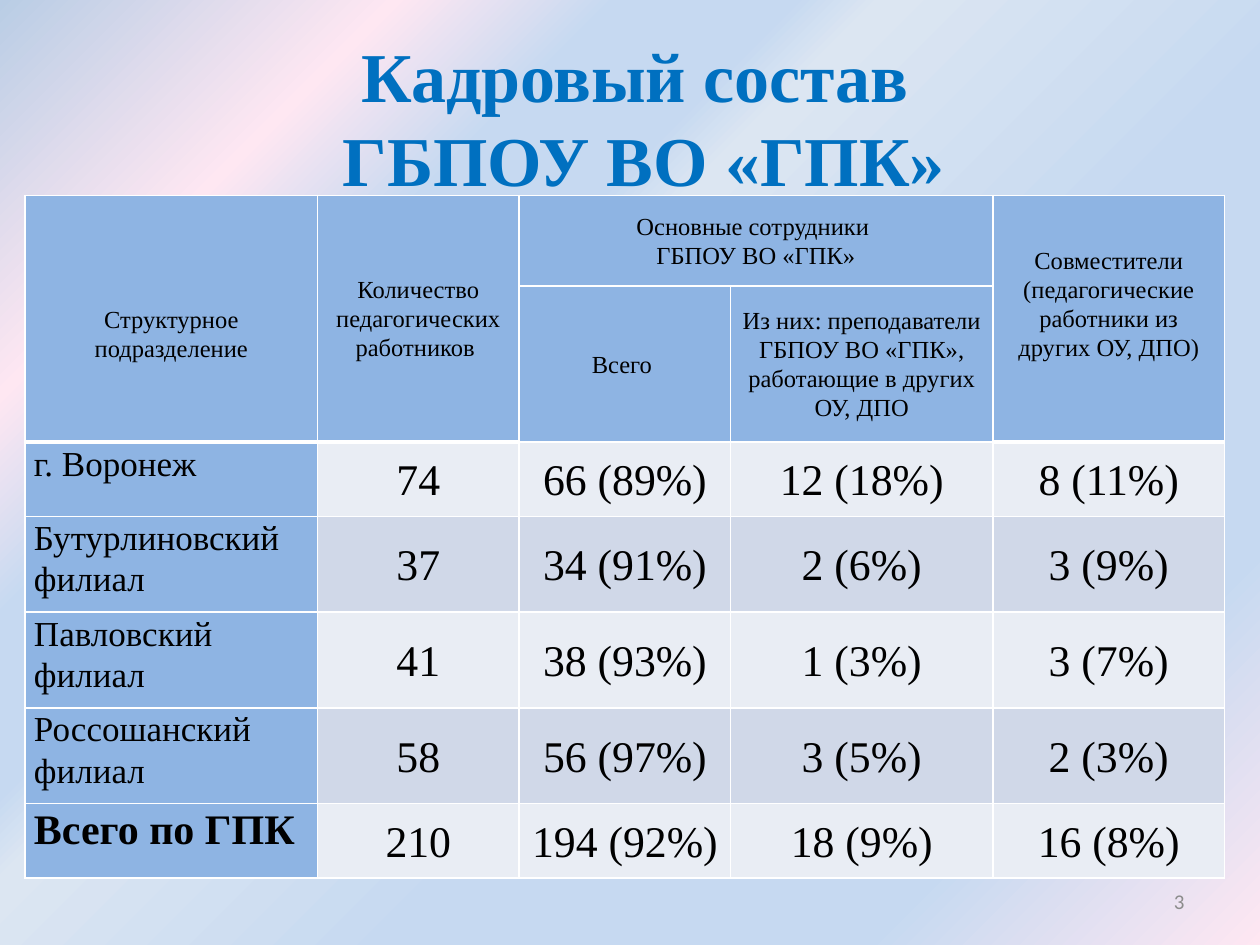
from lxml import etree
from pptx import Presentation
from pptx import util as u
from pptx.dml.color import RGBColor
from pptx.enum import text
from pptx.oxml import ns

BLUE = RGBColor(0x00, 0x70, 0xC0)
HEADER = RGBColor(0x8E, 0xB4, 0xE3)
LIGHT = RGBColor(0xE9, 0xED, 0xF4)
DARK = RGBColor(0xD0, 0xD8, 0xE8)
GREY = RGBColor(0x8C, 0x8C, 0x8C)
WHITE = RGBColor(0xFF, 0xFF, 0xFF)
BLACK = RGBColor(0x00, 0x00, 0x00)
PINK = RGBColor(0xFE, 0xE7, 0xF2)
SKY = RGBColor(0xC6, 0xD9, 0xF1)
STEEL = RGBColor(0xB9, 0xCD, 0xE5)
PALE = RGBColor(0xDC, 0xE6, 0xF2)

STOPS = [(0, STEEL), (18, PINK), (28, SKY), (36, SKY),
         (40, PALE), (61, SKY), (82, SKY), (100, PINK)]

COLUMNS = [2.32, 1.6, 1.68, 2.08, 1.84]
ROWS = [0.72, 1.17, 0.59, 0.76, 0.76, 0.76, 0.59]
HEADER_ROWS = 2
SPANS = [(0, 0, 1, 0), (0, 1, 1, 1), (0, 2, 0, 3), (0, 4, 1, 4)]
HEADERS = {
    (0, 0): "Структурное подразделение",
    (0, 1): "Количество педагогических работников ",
    (0, 2): "Основные сотрудники \nГБПОУ ВО «ГПК»",
    (0, 4): "Совместители (педагогические работники из других ОУ, ДПО)",
    (1, 2): "Всего ",
    (1, 3): "Из них: преподаватели ГБПОУ ВО «ГПК», работающие в других ОУ, ДПО",
}
STAFF = [
    ("г. Воронеж", "74", "66 (89%)", "12 (18%)", "8 (11%)"),
    ("Бутурлиновский филиал", "37", "34 (91%)", "2 (6%)", "3 (9%)"),
    ("Павловский филиал", "41", "38 (93%)", "1 (3%)", "3 (7%)"),
    ("Россошанский филиал", "58", "56 (97%)", "3 (5%)", "2 (3%)"),
    ("Всего по ГПК", "210", "194 (92%)", "18 (9%)", "16 (8%)"),
]


class SlideBuilder:
    font = "Times New Roman"

    def __init__(self, prs):
        self.s = prs.slides.add_slide(prs.slide_layouts[5])

    def background(self, stops, angle):
        self.s.background.fill.gradient()
        grad = self.s.element.find(".//" + ns.qn("a:gradFill"))
        stop_list = grad.find(ns.qn("a:gsLst"))
        for old in list(stop_list):
            stop_list.remove(old)
        for position, color in stops:
            stop = etree.SubElement(stop_list, ns.qn("a:gs"), pos=str(position * 1000))
            etree.SubElement(stop, ns.qn("a:srgbClr"), val=str(color))
        grad.find(ns.qn("a:lin")).set("ang", str(angle * 60000))

    def set_text(self, tf, content, size, color, align, bold=False, font=None, spacing=None):
        tf.text = content
        for p in tf.paragraphs:
            p.alignment = align
            p.line_spacing = spacing
            p.font.size = u.Pt(size)
            p.font.name = font or self.font
            p.font.bold = bold
            p.font.color.rgb = color

    def title(self, content, box):
        sp = self.s.shapes.title
        sp.left, sp.top, sp.width, sp.height = map(u.Inches, box)
        tf = sp.text_frame
        tf.word_wrap = False
        tf.auto_size = text.MSO_AUTO_SIZE.NONE
        tf.vertical_anchor = text.MSO_ANCHOR.TOP
        self.set_text(tf, content, 40, BLUE, text.PP_ALIGN.CENTER, bold=True, spacing=1.0)

    def page_number(self, content, box):
        tf = self.s.shapes.add_textbox(*map(u.Inches, box)).text_frame
        tf.word_wrap = True
        tf.vertical_anchor = text.MSO_ANCHOR.MIDDLE
        self.set_text(tf, content, 12, GREY, text.PP_ALIGN.RIGHT, font="Calibri")

    def table(self, x, y, columns, rows):
        frame = self.s.shapes.add_table(
            len(rows), len(columns), u.Inches(x), u.Inches(y),
            u.Inches(sum(columns)), u.Inches(sum(rows)))
        table = frame.table
        table.first_row = False
        table.horz_banding = False
        for column, width in zip(table.columns, columns):
            column.width = u.Inches(width)
        for row, height in zip(table.rows, rows):
            row.height = u.Inches(height)
        return table

    def cell(self, cell, content, fill, size, align=text.PP_ALIGN.CENTER,
             anchor=text.MSO_ANCHOR.MIDDLE, bold=False):
        cell.margin_left = cell.margin_right = u.Inches(0.07)
        cell.margin_top = cell.margin_bottom = 0
        cell.vertical_anchor = anchor
        self.set_text(cell.text_frame, content, size, BLACK, align, bold, spacing=1.07)
        cell.fill.solid()
        cell.fill.fore_color.rgb = fill

    def borders(self, cell, **widths):
        tcPr = cell._tc.get_or_add_tcPr()
        for i, side in enumerate("LRTB"):
            line = etree.Element(ns.qn("a:ln" + side), w=str(u.Pt(widths.get(side, 1))))
            solid = etree.SubElement(line, ns.qn("a:solidFill"))
            etree.SubElement(solid, ns.qn("a:srgbClr"), val=str(WHITE))
            tcPr.insert(i, line)


def fill_table(b):
    table = b.table(0.2, 1.55, COLUMNS, ROWS)
    for top, left, bottom, right in SPANS:
        table.cell(top, left).merge(table.cell(bottom, right))
    for (row, col), content in HEADERS.items():
        b.cell(table.cell(row, col), content, HEADER, 14)
    table.cell(0, 0).margin_top = u.Inches(0.24)
    table.cell(0, 4).margin_bottom = u.Inches(0.24)

    for row, (unit, *values) in enumerate(STAFF, HEADER_ROWS):
        total = row == len(ROWS) - 1
        b.cell(table.cell(row, 0), unit, HEADER, 24 if total else 20,
               text.PP_ALIGN.LEFT, text.MSO_ANCHOR.TOP, total)
        for col, value in enumerate(values, 1):
            b.cell(table.cell(row, col), value, DARK if row % 2 else LIGHT, 25)

    tall = {left for top, left, bottom, right in SPANS if bottom > top}
    for row in range(len(ROWS)):
        for col in range(len(COLUMNS)):
            widths = {}
            if col in tall and row < HEADER_ROWS:
                widths["B"] = 3
            if col in tall and row == HEADER_ROWS:
                widths["T"] = 3
            b.borders(table.cell(row, col), **widths)


def main():
    prs = Presentation()
    prs.slide_width, prs.slide_height = u.Inches(10), u.Inches(7.5)
    b = SlideBuilder(prs)
    b.background(STOPS, 45)
    b.page_number("3", (7.17, 6.95, 2.33, 0.4))
    fill_table(b)
    b.title("Кадровый состав\n ГБПОУ ВО «ГПК»", (2.45, 0.21, 5.18, 1.45))
    prs.save("out.pptx")


if __name__ == "__main__":
    main()
